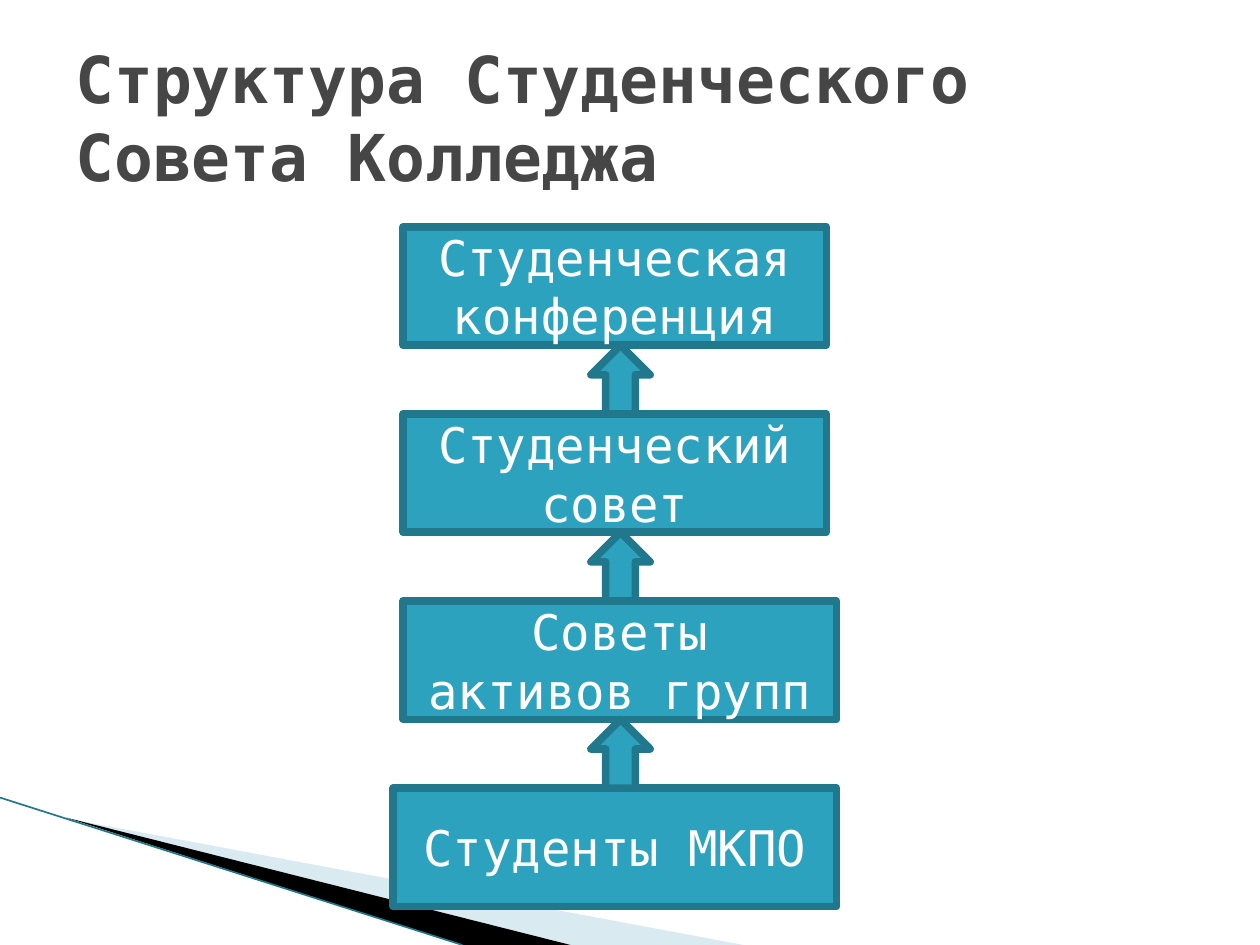
import dataclasses

import lxml.etree
import pptx
import pptx.dml.color
import pptx.enum.shapes
import pptx.enum.text
import pptx.oxml.ns
import pptx.util


@dataclasses.dataclass(frozen=True)
class Theme:
    font: str = "DejaVu Sans Mono"
    heading: str = "464646"
    level: str = "2DA2BF"
    outline: str = "21788D"
    label: str = "FFFFFF"
    pale_ray: str = "A0CBDC"
    dark_ray: str = "000000"
    heading_size: float = 36.9
    label_size: float = 28
    outline_width: float = 4.33
    ray_width: float = 0.95


THEME = Theme()
WIDTH, HEIGHT = 10, 7.5
COLUMN = 0.08
FIRST_TOP, STEP, LEVEL_HEIGHT = 1.8, 1.485, 0.94
ARROW_LEFT, ARROW_WIDTH = 4.69, 0.47
LEVELS = [
    ("Студенческая конференция", 40, 42),
    ("Студенческий совет", 40, 42),
    ("Советы активов групп", 40, 43),
    ("Студенты МКПО", 39, 44),
]


def inches(*lengths):
    return [pptx.util.Inches(length) for length in lengths]


def color(value):
    return pptx.dml.color.RGBColor.from_string(value)


def add_child(parent, tag, **attributes):
    return lxml.etree.SubElement(parent, pptx.oxml.ns.qn(tag), **attributes)


def write(frame, text, size, tint, bold=False, align=None):
    frame.word_wrap = True
    frame.vertical_anchor = pptx.enum.text.MSO_ANCHOR.MIDDLE
    paragraph = frame.paragraphs[0]
    paragraph.text = text
    paragraph.alignment = align
    paragraph.font.name = THEME.font
    paragraph.font.size = pptx.util.Pt(size)
    paragraph.font.bold = bold
    paragraph.font.color.rgb = color(tint)


def add_ray(slide, points, tint, opacity=100):
    start, *rest = [inches(*point) for point in points]
    builder = slide.shapes.build_freeform(*start)
    builder.add_line_segments(rest, close=True)
    ray = builder.convert_to_shape()
    ray.shadow.inherit = False
    ray.fill.solid()
    ray.fill.fore_color.rgb = color(tint)
    ray.line.fill.background()
    if opacity < 100:
        tone = ray.fill._xPr.find(".//" + pptx.oxml.ns.qn("a:srgbClr"))
        add_child(tone, "a:alpha", val=str(opacity * 1000))


def add_ray_edge(slide, start, end):
    edge = slide.shapes.add_connector(
        pptx.enum.shapes.MSO_CONNECTOR.STRAIGHT, *inches(*start, *end))
    edge.line.color.rgb = color(THEME.outline)
    edge.line.width = pptx.util.Pt(THEME.ray_width)
    add_child(edge._element.spPr, "a:effectLst")


def add_block(slide, preset, left, top, width, height):
    block = slide.shapes.add_shape(preset, *inches(left, top, width, height))
    block.shadow.inherit = False
    block.fill.solid()
    block.fill.fore_color.rgb = color(THEME.level)
    block.line.color.rgb = color(THEME.outline)
    block.line.width = pptx.util.Pt(THEME.outline_width)
    add_child(block.line._get_or_add_ln(), "a:round")
    return block


def add_level(slide, text, first_column, columns, top):
    level = add_block(slide, pptx.enum.shapes.MSO_SHAPE.RECTANGLE,
                      first_column * COLUMN, top, columns * COLUMN, LEVEL_HEIGHT)
    write(level.text_frame, text, THEME.label_size, THEME.label,
          align=pptx.enum.text.PP_ALIGN.CENTER)


def add_heading(slide, text):
    heading = slide.shapes.add_textbox(
        *inches(WIDTH * 0.05, HEIGHT * 0.04, WIDTH * 0.9, HEIGHT / 6))
    write(heading.text_frame, text, THEME.heading_size, THEME.heading, bold=True)


def main():
    deck = pptx.Presentation()
    deck.slide_width, deck.slide_height = inches(WIDTH, HEIGHT)
    slide = deck.slides.add_slide(deck.slide_layouts[6])

    add_ray(slide, [(0.55, 6.5), (5.9, HEIGHT), (4.53, HEIGHT)], THEME.pale_ray, 40)
    add_ray(slide, [(0.53, 6.49), (4.53, HEIGHT), (3.67, HEIGHT)], THEME.dark_ray)
    add_ray_edge(slide, (0, 6.33), (3.67, HEIGHT))
    add_heading(slide, "Структура Студенческого Совета Колледжа")

    tops = [FIRST_TOP + STEP * row for row in range(len(LEVELS))]
    for (text, first_column, columns), top in zip(LEVELS, tops):
        add_level(slide, text, first_column, columns, top)
    for top in tops[:-1]:
        add_block(slide, pptx.enum.shapes.MSO_SHAPE.UP_ARROW, ARROW_LEFT,
                  top + LEVEL_HEIGHT, ARROW_WIDTH, STEP - LEVEL_HEIGHT)

    deck.save("out.pptx")


if __name__ == "__main__":
    main()
